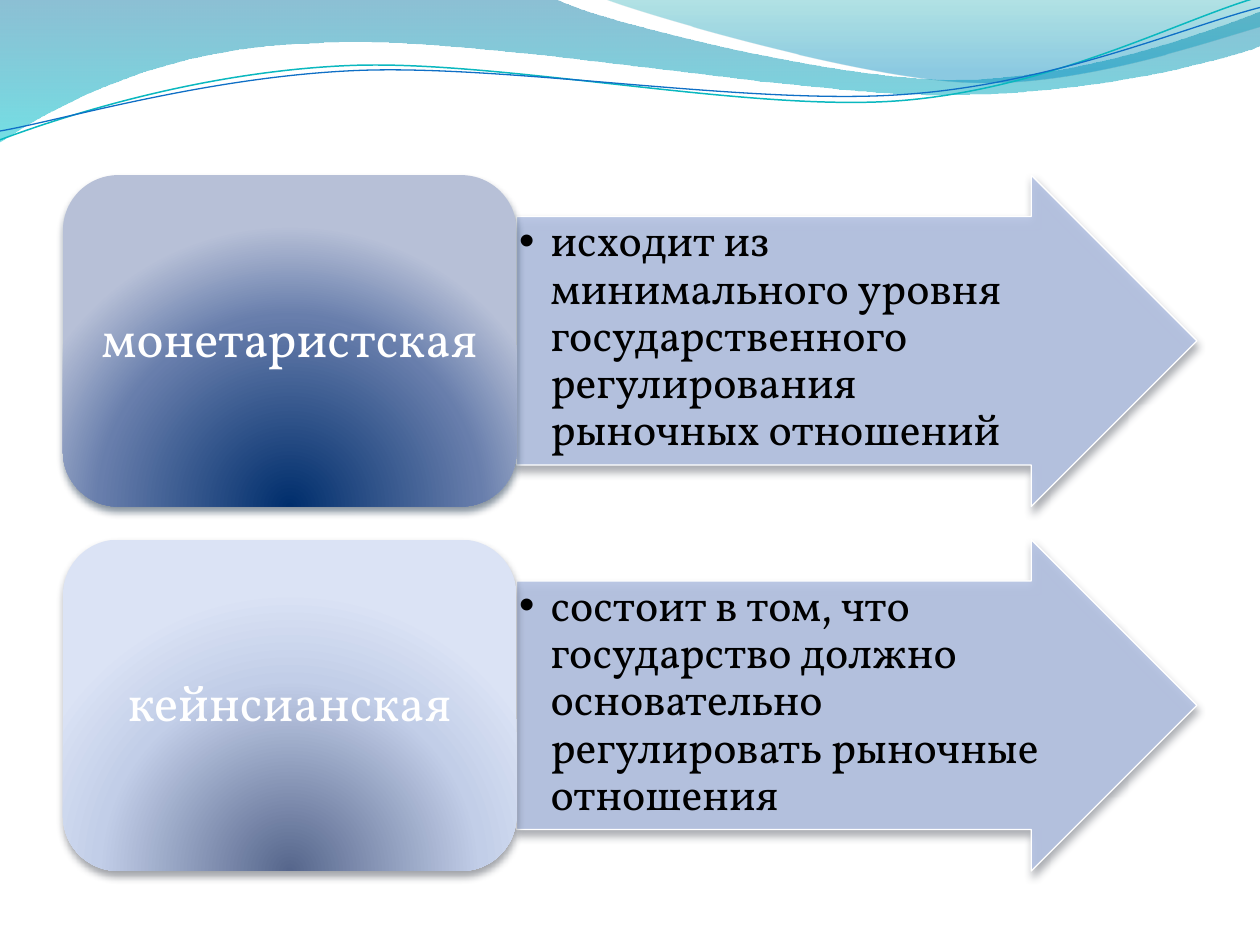
import math

from pptx import Presentation
from pptx import util as u
from pptx.dml.color import RGBColor
from pptx.enum import shapes, text
from pptx.oxml import parse_xml
from pptx.oxml.ns import nsdecls, qn

FONT = "Vollkorn"
TILT = 357.3
LINEAR = '<a:lin ang="5400000" scaled="0"/>'
RADIAL = '<a:path path="circle"><a:fillToRect l="50000" t="130000" r="50000" b="-30000"/></a:path>'
BANDS = [
    ([[(0, 0)], [(4.4, -0.01)],
      [(4.76, 0.17), (6.64, 0.63), (7.58, 0.63)], [(8.53, 0.63), (9.58, 0.26), (10, 0.09)],
      [(10.01, 0.36)],
      [(9.83, 0.44), (8.7, 0.76), (7.46, 0.75)], [(6.22, 0.75), (3.82, 0.28), (2.57, 0.34)],
      [(1.29, 0.36), (0.46, 0.83), (-0.01, 1.13)], [(0, 0)]],
     [(0, "0074A1", 45), (100, "00C6CF", 55)]),
    ([[(4.79, -0.01)],
      [(5.09, 0.11), (6.82, 0.62), (7.69, 0.65)], [(8.56, 0.69), (9.61, 0.32), (10, 0.21)],
      [(10, 0)], [(4.79, -0.01)]],
     [(0, "00A1A9", 30), (80, "008BBF", 45)]),
]
STRANDS = [
    ([[(0, 1.11)], [(0.48, 0.93), (1.58, 0.57), (2.77, 0.52)],
      [(3.95, 0.47), (5.93, 0.89), (7.13, 0.8)], [(8.33, 0.71), (9.38, 0.15), (9.98, -0.02)]],
     (4.99, 0.57), "0AB8BF", 0.85),
    ([[(0, 1.04)], [(0.47, 0.96), (1.64, 0.61), (2.83, 0.56)],
      [(4.03, 0.51), (5.97, 0.84), (7.17, 0.75)], [(8.36, 0.67), (9.41, 0.21), (10, 0.06)]],
     (5, 0.59), "0F6FC6", 0.75),
]
ROWS = [
    ("монетаристская",
     "исходит из минимального уровня государственного регулирования рыночных отношений",
     [(0, "002E6C", 100), (68, "687EAC", 100), (100, "B7C0D7", 100)], "031D35"),
    ("кейнсианская",
     "состоит в том, что государство должно основательно регулировать рыночные отношения",
     [(0, "56668C", 100), (68, "C2CEE8", 100), (100, "DBE3F5", 100)], "404550"),
]


def rgb(code):
    """Return the colour for a hex string."""
    return RGBColor.from_string(code)


def gradient(sp, stops, direction):
    """Fill a shape with (position, colour, opacity) stops."""
    sp.fill.gradient()
    old = sp._element.spPr.find(qn("a:gradFill"))
    marks = "".join(
        f'<a:gs pos="{pos * 1000}"><a:srgbClr val="{code}"><a:alpha val="{alpha * 1000}"/>'
        f'</a:srgbClr></a:gs>' for pos, code, alpha in stops)
    new = parse_xml(f'<a:gradFill {nsdecls("a")} rotWithShape="1"><a:gsLst>{marks}</a:gsLst>'
                    f'{direction}</a:gradFill>')
    old.getparent().replace(old, new)


def drop_shadow(sp, code):
    """Give a shape a soft shadow below it."""
    sp.shadow.inherit = False
    sp._element.spPr.find(qn("a:effectLst")).append(parse_xml(
        f'<a:outerShdw {nsdecls("a")} blurRad="{u.Pt(4.5)}" dist="{u.Pt(3)}" dir="5400000" '
        f'rotWithShape="0"><a:srgbClr val="{code}"><a:alpha val="48000"/></a:srgbClr>'
        f'</a:outerShdw>'))


def outline(slide, segments, close):
    """Draw a freeform whose three-point segments are cubic curves."""
    start, *rest = [(u.Inches(x), u.Inches(y)) for seg in segments for x, y in seg]
    builder = slide.shapes.build_freeform(*start)
    builder.add_line_segments(rest, close=close)
    sp = builder.convert_to_shape()
    sp.shadow.inherit = False
    lines = iter(list(sp._element.spPr.iter(qn("a:lnTo"))))
    for seg in segments[1:]:
        first, *others = [next(lines) for _ in seg]
        if others:
            curve = parse_xml(f'<a:cubicBezTo {nsdecls("a")}/>')
            first.getparent().replace(first, curve)
            curve.append(first[0])
            for line in others:
                curve.append(line[0])
                line.getparent().remove(line)
    return sp


def turned(segments, centre, degrees):
    """Rotate segments clockwise about a centre."""
    cx, cy = centre
    c, s = math.cos(math.radians(degrees)), math.sin(math.radians(degrees))
    return [[(cx + (x - cx) * c - (y - cy) * s, cy + (x - cx) * s + (y - cy) * c)
             for x, y in seg] for seg in segments]


def waves(slide):
    """Draw the header bands and the thin strands over them."""
    for segments, stops in BANDS:
        sp = outline(slide, segments, True)
        gradient(sp, stops, LINEAR)
        sp.line.fill.background()
    for segments, centre, code, width in STRANDS:
        sp = outline(slide, turned(segments, centre, 360 - TILT), False)
        sp.rotation = TILT
        sp.fill.background()
        sp.line.color.rgb = rgb(code)
        sp.line.width = u.Pt(width)


def write(sp, words, size, code, align, anchor, inset):
    """Write one formatted paragraph into a shape and return it."""
    tf = sp.text_frame
    tf.word_wrap = True
    tf.auto_size = text.MSO_AUTO_SIZE.NONE
    tf.vertical_anchor = anchor
    tf.margin_left = tf.margin_right = u.Inches(inset[0])
    tf.margin_top = tf.margin_bottom = u.Inches(inset[1])
    p = tf.paragraphs[0]
    p.alignment = align
    p.line_spacing = 0.9
    p.space_before = u.Pt(0)
    r = p.add_run()
    r.text = words
    r.font.name, r.font.size, r.font.color.rgb = FONT, u.Pt(size), rgb(code)
    return p


def theory_row(slide, body, box, row):
    """Place a named block, its arrow and the bullet on the arrow."""
    x, y, w, h = box
    name, idea, stops, shade = row
    split = int(w * 0.4)
    arrow = slide.shapes.add_shape(shapes.MSO_SHAPE.RIGHT_ARROW, x + split, y, w - split, h)
    arrow.adjustments[0], arrow.adjustments[1] = 0.75, 0.5
    arrow.fill.solid()
    arrow.fill.fore_color.rgb = rgb("B4C2E2")
    arrow._element.spPr.find(qn("a:solidFill"))[0].append(
        parse_xml(f'<a:alpha {nsdecls("a")} val="90000"/>'))
    arrow.line.color.rgb = rgb("FFFFFF")
    arrow.line.width = u.Pt(0.75)
    drop_shadow(arrow, "3F4450")

    body.left, body.top = x + split, y + h // 8
    body.width, body.height = w - split - h * 3 // 8, h * 3 // 4
    slide.shapes._spTree.append(body._element)
    p = write(body, idea, 25, "000000", text.PP_ALIGN.LEFT, text.MSO_ANCHOR.TOP, (0.02, 0.02))
    p.level = 1
    pPr = p._p.get_or_add_pPr()
    pPr.set("marL", str(u.Inches(0.25)))
    pPr.set("indent", str(-u.Inches(0.25)))
    pPr.append(parse_xml(f'<a:buChar {nsdecls("a")} char="•"/>'))

    block = slide.shapes.add_shape(shapes.MSO_SHAPE.ROUNDED_RECTANGLE, x, y, split, h)
    gradient(block, stops, RADIAL)
    block.line.fill.background()
    drop_shadow(block, shade)
    write(block, name, 29, "FFFFFF", text.PP_ALIGN.CENTER, text.MSO_ANCHOR.MIDDLE, (0.12, 0.06))


def main():
    """Build and save the slide."""
    prs = Presentation()
    prs.slide_width, prs.slide_height = u.Inches(10), u.Inches(7.5)
    slide = prs.slides.add_slide(prs.slide_layouts[3])
    title, *bodies = list(slide.placeholders)
    title._element.getparent().remove(title._element)
    waves(slide)
    left, top, width, height = (u.Inches(n) for n in (0.5, 1.39, 9, 2.63))
    for i, (body, row) in enumerate(zip(bodies, ROWS)):
        theory_row(slide, body, (left, top + int(i * height * 1.1), width, height), row)
    prs.save("out.pptx")


if __name__ == "__main__":
    main()
